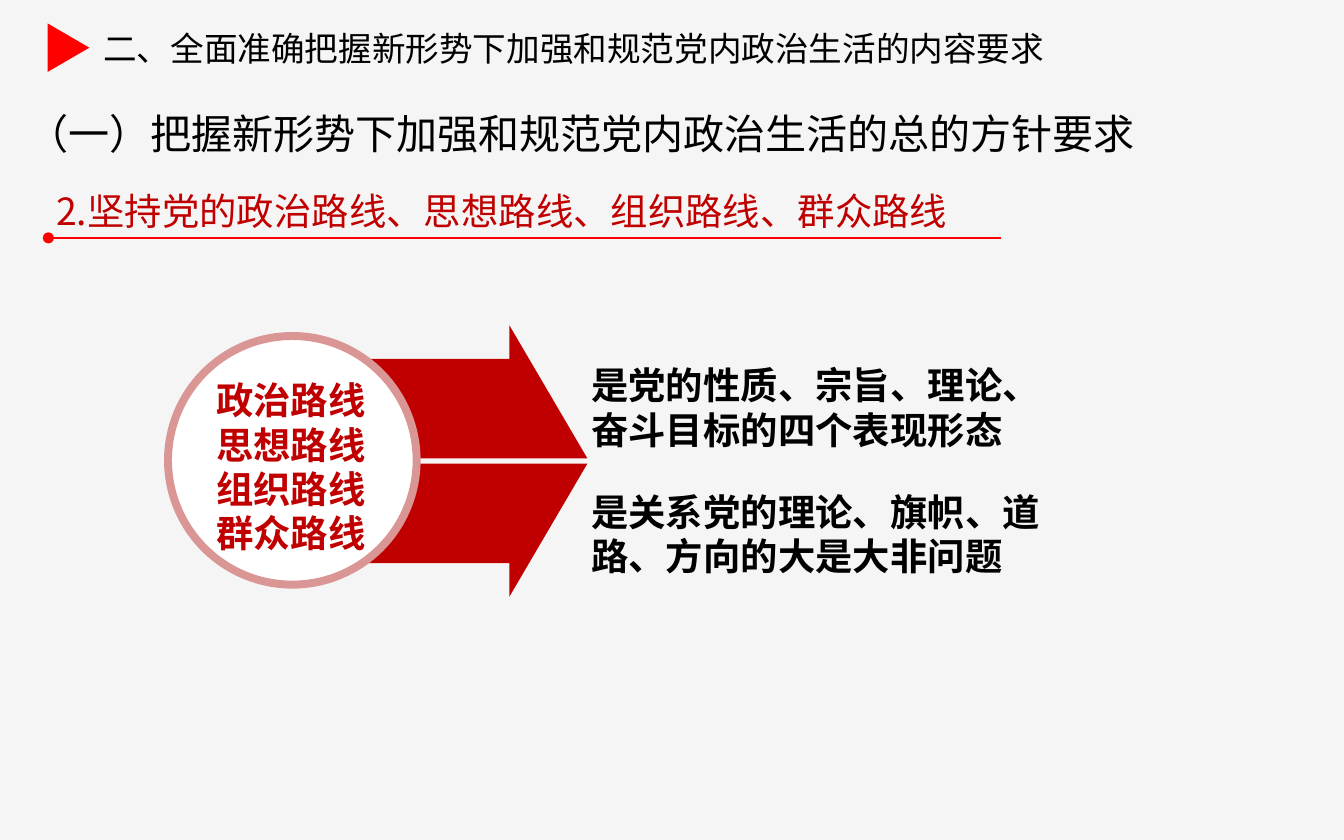
from lxml.etree import SubElement
from pptx import Presentation
from pptx.dml.color import RGBColor
from pptx.enum.shapes import MSO_CONNECTOR, MSO_SHAPE
from pptx.enum.text import MSO_ANCHOR, PP_ALIGN
from pptx.oxml.ns import qn
from pptx.util import Inches, Pt

FONT = "Noto Sans CJK SC"
COLORS = {"page": "F5F5F5", "red": "FF0000", "deep": "C00000",
          "pink": "D99694", "white": "FFFFFF", "black": "000000"}


def tint(name):
    return RGBColor.from_string(COLORS[name])


def paint(shape, fill):
    shape.shadow.inherit = False
    shape.fill.solid()
    shape.fill.fore_color.rgb = tint(fill)
    shape.line.fill.background()


def write(shape, text, size, color="black", bold=False, wrap=True):
    frame = shape.text_frame
    frame.word_wrap = wrap
    frame.margin_top, frame.margin_bottom = Inches(0.08), Inches(0.02)
    frame.text = text
    for para in frame.paragraphs:
        para.alignment = PP_ALIGN.LEFT
        para.line_spacing = Pt(round(size * 1.19, 1))
        for run in para.runs:
            font = run.font
            font.name, font.size, font.bold = FONT, Pt(size), bold
            font.color.rgb = tint(color)
            # East Asian glyphs need their own font entry
            SubElement(run._r.get_or_add_rPr(), qn("a:ea"), typeface=FONT)


def add_text(slide, box, text, size, **style):
    shape = slide.shapes.add_textbox(*map(Inches, box))
    write(shape, text, size, **style)


def add_shape(slide, kind, box, fill):
    shape = slide.shapes.add_shape(kind, *map(Inches, box))
    paint(shape, fill)
    return shape


def add_arrow(slide, base, side):
    """Half an arrow whose flat edge is at base; side is -1 for up, 1 for down."""
    edge, tip = base + side * 0.74, base + side * 0.99
    points = [(2.48, edge), (3.79, edge), (3.79, tip), (4.37, base)]
    path = slide.shapes.build_freeform(Inches(2.48), Inches(base), scale=1.0)
    path.add_line_segments([(Inches(x), Inches(y)) for x, y in points])
    paint(path.convert_to_shape(), "deep")


def add_rule(slide, left, right, top):
    line = slide.shapes.add_connector(
        MSO_CONNECTOR.STRAIGHT, Inches(left), Inches(top), Inches(right), Inches(top))
    line.line.color.rgb = tint("red")
    line.line.width = Pt(0.75)
    SubElement(line.line._get_or_add_ln(), qn("a:headEnd"), type="oval")
    SubElement(line._element.spPr, qn("a:effectLst"))


def main():
    deck = Presentation()
    deck.slide_width, deck.slide_height = Inches(10), Inches(6.25)
    slide = deck.slides.add_slide(deck.slide_layouts[6])
    slide.background.fill.solid()
    slide.background.fill.fore_color.rgb = tint("page")

    # Section and topic headings
    mark = add_shape(slide, MSO_SHAPE.ISOSCELES_TRIANGLE, (0.33, 0.2, 0.36, 0.31), "red")
    mark.rotation = 90
    add_text(slide, (0.67, 0.13, 7.8, 0.4),
             "二、全面准确把握新形势下加强和规范党内政治生活的内容要求", 18)
    add_text(slide, (0.11, 0.73, 9.41, 0.47),
             "（一）把握新形势下加强和规范党内政治生活的总的方针要求", 22)

    # Underlined point
    add_rule(slide, 0.36, 7.45, 1.77)
    point = add_shape(slide, MSO_SHAPE.ROUNDED_RECTANGLE, (0.28, 1.32, 8.03, 0.44), "page")
    point.fill.background()
    point.adjustments[0] = 0.31
    write(point, "2.坚持党的政治路线、思想路线、组织路线、群众路线", 20, color="deep")
    point.text_frame.vertical_anchor = MSO_ANCHOR.MIDDLE

    # Arrows leading out of the circle
    add_arrow(slide, 3.41, -1)
    add_arrow(slide, 3.45, 1)
    ring = add_shape(slide, MSO_SHAPE.OVAL, (1.25, 2.5, 1.85, 1.85), "white")
    ring.line.color.rgb = tint("pink")
    ring.line.width = Pt(4.25)
    add_text(slide, (1.51, 2.73, 1.32, 1.45), "政治路线\n思想路线\n组织路线\n群众路线",
             20, color="deep", bold=True, wrap=False)

    # Meanings
    add_text(slide, (4.3, 2.62, 3.7, 0.77),
             "是党的性质、宗旨、理论、奋斗目标的四个表现形态", 20, bold=True)
    add_text(slide, (4.3, 3.56, 3.54, 0.77),
             "是关系党的理论、旗帜、道路、方向的大是大非问题", 20, bold=True)

    deck.save("out.pptx")


if __name__ == "__main__":
    main()
